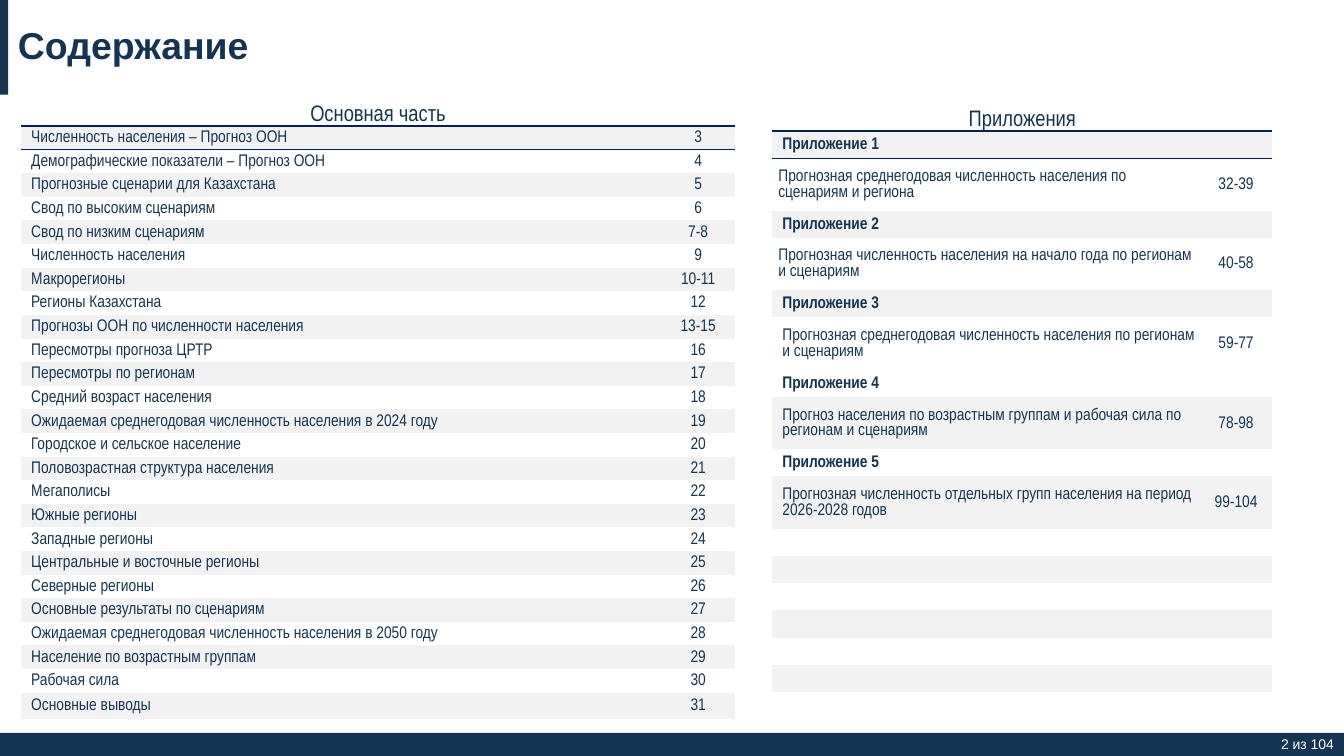
from lxml import etree
from pptx import Presentation
from pptx.dml.color import RGBColor
from pptx.enum.shapes import MSO_SHAPE
from pptx.enum.text import MSO_ANCHOR, PP_ALIGN
from pptx.oxml.ns import qn
from pptx.util import Inches, Pt

RECTANGLE = MSO_SHAPE.RECTANGLE
MIDDLE, BOTTOM = MSO_ANCHOR.MIDDLE, MSO_ANCHOR.BOTTOM
LEFT, CENTER, RIGHT = PP_ALIGN.LEFT, PP_ALIGN.CENTER, PP_ALIGN.RIGHT
NAVY, RULE, BAND, WHITE = "143452", "002060", "F2F2F2", "FFFFFF"
NO_GRID_STYLE = "{2D5ABB26-0587-4C30-8999-92F81FD0307C}"
WIDTH, HEIGHT = 13.33, 7.5
HEADER, FOOTER = 0.94, 0.23
TABLE_HEIGHT = 6.2


def color(hex_string):
    return RGBColor.from_string(hex_string)


def write(frame, text, size, font, hex_string=NAVY, align=LEFT, bold=False):
    paragraph = frame.paragraphs[0]
    paragraph.alignment = align
    run = paragraph.add_run()
    run.text = text
    run.font.size = Pt(size)
    run.font.name = font
    run.font.bold = bold
    run.font.color.rgb = color(hex_string)


presentation = Presentation()
presentation.slide_width = Inches(WIDTH)
presentation.slide_height = Inches(HEIGHT)
slide = presentation.slides.add_slide(presentation.slide_layouts[6])

# Footer band and title accent
for left, top, width, height in [(0, HEIGHT - FOOTER, WIDTH, FOOTER),
                                 (0, 0, 0.08, HEADER)]:
    shape = slide.shapes.add_shape(RECTANGLE, Inches(left), Inches(top),
                                   Inches(width), Inches(height))
    shape.shadow.inherit = False
    shape.fill.solid()
    shape.fill.fore_color.rgb = color(NAVY)
    shape.line.fill.background()

# Page number and title
for left, top, width, height, right_margin, text, size, ink, align, bold in [
        (12.04, HEIGHT - FOOTER, 1.19, FOOTER, 0, "2 из 104", 10, WHITE, RIGHT, False),
        (0.08, 0, WIDTH - 0.08, HEADER, 0.1, "Содержание", 26.7, NAVY, LEFT, True)]:
    frame = slide.shapes.add_textbox(Inches(left), Inches(top),
                                     Inches(width), Inches(height)).text_frame
    frame.word_wrap = True
    frame.vertical_anchor = MIDDLE
    frame.margin_right = Inches(right_margin)
    write(frame, text, size, "Arial", ink, align, bold)
    frame.paragraphs[0].line_spacing = 0.9 if bold else 1

# Contents: (text, pages); a row without pages is a heading
main_rows = [
    ("Численность населения – Прогноз ООН", "3"),
    ("Демографические показатели – Прогноз ООН", "4"),
    ("Прогнозные сценарии для Казахстана", "5"),
    ("Свод по высоким сценариям", "6"),
    ("Свод по низким сценариям", "7-8"),
    ("Численность населения", "9"),
    ("Макрорегионы", "10-11"),
    ("Регионы Казахстана", "12"),
    ("Прогнозы ООН по численности населения", "13-15"),
    ("Пересмотры прогноза ЦРТР", "16"),
    ("Пересмотры по регионам", "17"),
    ("Средний возраст населения", "18"),
    ("Ожидаемая среднегодовая численность населения в 2024 году", "19"),
    ("Городское и сельское население", "20"),
    ("Половозрастная структура населения", "21"),
    ("Мегаполисы", "22"),
    ("Южные регионы", "23"),
    ("Западные регионы", "24"),
    ("Центральные и восточные регионы", "25"),
    ("Северные регионы", "26"),
    ("Основные результаты по сценариям", "27"),
    ("Ожидаемая среднегодовая численность населения в 2050 году", "28"),
    ("Население по возрастным группам", "29"),
    ("Рабочая сила", "30"),
    ("Основные выводы", "31"),
]
appendices = [
    ("Прогнозная среднегодовая численность населения по сценариям и региона", "32-39"),
    ("Прогнозная численность населения на начало года по регионам и сценариям", "40-58"),
    ("Прогнозная среднегодовая численность населения по регионам и сценариям", "59-77"),
    ("Прогноз населения по возрастным группам и рабочая сила по регионам и сценариям", "78-98"),
    ("Прогнозная численность отдельных групп населения на период 2026-2028 годов", "99-104"),
]
appendix_rows = []
for number, appendix in enumerate(appendices, 1):
    appendix_rows += [(f"Приложение {number}", ""), appendix]
appendix_rows += [("", "")] * 7

# Row heights and shaded rows
main_heights = [0.31] + [(TABLE_HEIGHT - 0.31 - 0.26) / 24] * 24 + [0.26]
appendix_heights = [0.36] + [0.27, 0.52] * 5 + [0.27] * 7
main_bands = range(1, 26, 2)
appendix_bands = [1, 3, 5, *range(8, 18, 2)]
outdented_rows = [2, 4]  # appendix texts that start further left

# Tables
for left, columns, title, rows, heights, bands, outdented in [
        (0.21, (6.35, 0.73), "Основная часть", main_rows, main_heights, main_bands, []),
        (7.66, (4.24, 0.72), "Приложения", appendix_rows, appendix_heights,
         appendix_bands, outdented_rows)]:
    table = slide.shapes.add_table(len(heights), 2, Inches(left), Inches(HEADER),
                                   Inches(sum(columns)), Inches(TABLE_HEIGHT)).table
    table.first_row = table.horz_banding = False
    table._tbl.tblPr.find(qn("a:tableStyleId")).text = NO_GRID_STYLE
    for column, width in zip(table.columns, columns):
        column.width = Inches(width)

    for index, (texts, height) in enumerate(zip([(title, ""), *rows], heights)):
        table.rows[index].height = Inches(height)
        heading = bool(texts[0]) and not texts[1]
        if heading:
            table.cell(index, 0).merge(table.cell(index, 1))
        for position, text in enumerate(texts):
            cell = table.cell(index, position)
            cell.vertical_anchor = BOTTOM if index == 0 else MIDDLE
            cell.margin_top, cell.margin_bottom = Inches(0.01), 0
            cell.margin_left = cell.margin_right = Inches(0.01) if position == 0 else 0
            if index and position == 0:
                cell.margin_left = Inches(0.06 if index in outdented else 0.1)
            if index in bands:
                cell.fill.solid()
                cell.fill.fore_color.rgb = color(BAND)
            else:
                cell.fill.background()
            if text:
                centered = index == 0 or position == 1
                write(cell.text_frame, text, 12 if index else 16, "Arial Narrow",
                      align=CENTER if centered else LEFT, bold=heading and index > 0)
            else:
                # Small type keeps empty rows at their set height
                end = etree.SubElement(cell.text_frame.paragraphs[0]._p, qn("a:endParaRPr"))
                end.set("sz", "1200")

            # Rule between the title and the first row
            if index < 2:
                properties = cell._tc.get_or_add_tcPr()
                border = etree.Element(qn("a:lnT" if index else "a:lnB"), w=str(Pt(1)))
                border_fill = etree.SubElement(border, qn("a:solidFill"))
                etree.SubElement(border_fill, qn("a:srgbClr"), val=RULE)
                properties.insert(0, border)

presentation.save("out.pptx")
